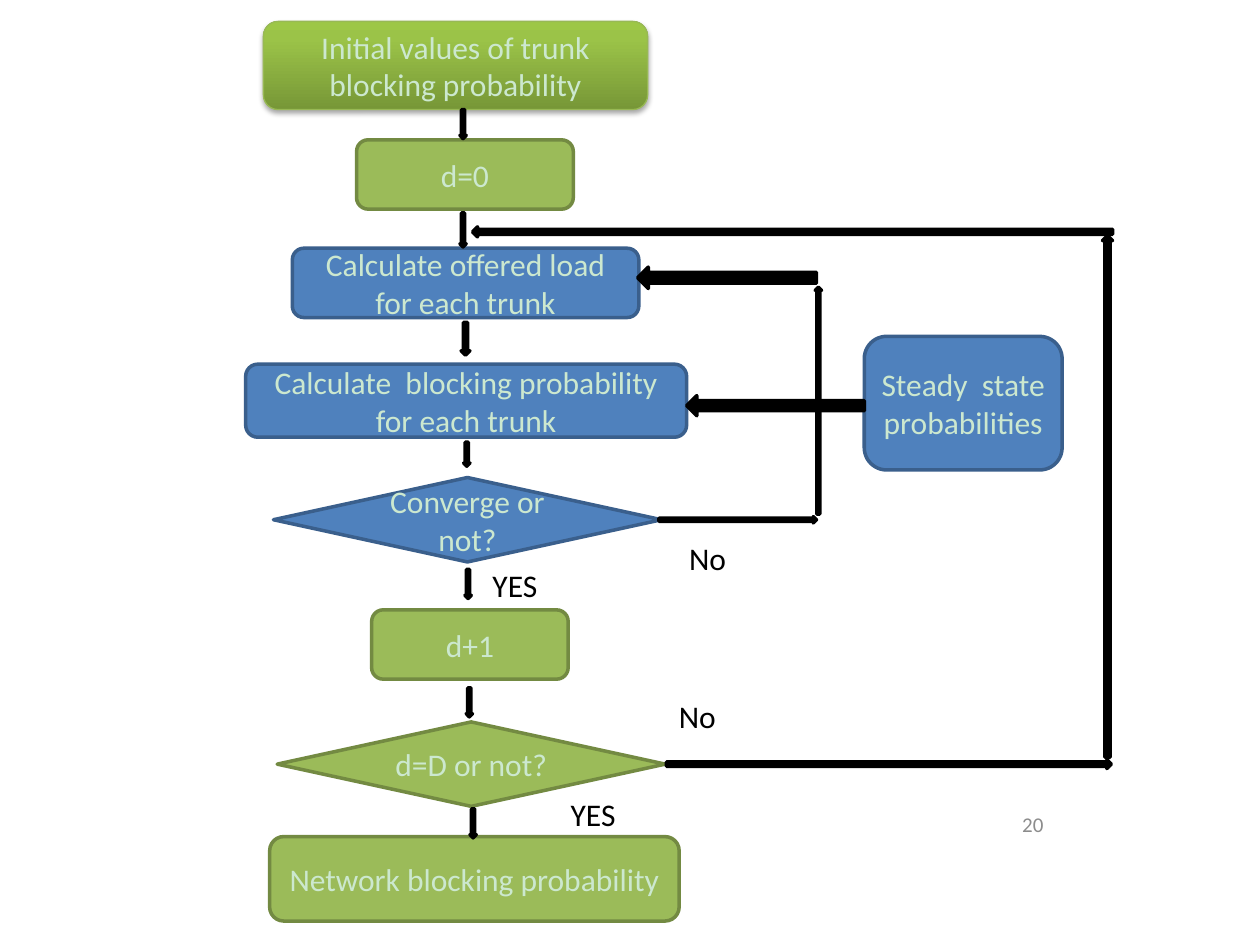
from dataclasses import dataclass

from lxml.etree import SubElement
from pptx import Presentation
from pptx.dml.color import RGBColor
from pptx.enum.shapes import MSO_SHAPE as Preset
from pptx.enum.text import MSO_ANCHOR as Anchor, MSO_AUTO_SIZE as AutoSize, PP_ALIGN as Align
from pptx.oxml.ns import qn
from pptx.util import Inches, Pt

COLUMNS, ROWS = 100, 75
FONT = "Calibri"
PALE, BLACK, GREY = "CCE8CF", "000000", "8C8C8C"
STEP, DECISION = Preset.FLOWCHART_ALTERNATE_PROCESS, Preset.FLOWCHART_DECISION


@dataclass(frozen=True)
class Cell:
    column: float
    row: float
    columns: float
    rows: float


@dataclass(frozen=True)
class Style:
    fill: str
    line: str


@dataclass(frozen=True)
class Node:
    text: str
    cell: Cell
    style: Style
    preset: Preset = STEP
    inset: bool = True


@dataclass(frozen=True)
class Label:
    text: str
    column: float
    row: float


GREEN = Style("9BBB59", "738A42")
BLUE = Style("4F81BD", "3A5F8C")
INK = Style(BLACK, BLACK)

START = Node("Initial values of trunk blocking probability", Cell(20.9, 1.7, 30.5, 7), GREEN)
NODES = [
    Node("d=0", Cell(28.3, 11.1, 17.2, 5.5), GREEN),
    Node("Calculate offered load for each trunk", Cell(23.2, 19.7, 27.5, 5.5), BLUE),
    Node("Calculate  blocking probability for each trunk", Cell(19.5, 28.9, 35, 5.8), BLUE),
    Node("Converge or not?", Cell(21.7, 37.9, 30.8, 6.7), BLUE, DECISION),
    Node("d+1", Cell(29.5, 48.4, 15.6, 5.5), GREEN),
    Node("d=D or not?", Cell(22, 57.3, 30.8, 6.7), GREEN, DECISION),
    Node("Network blocking probability ", Cell(21.4, 66.4, 32.5, 6.7), GREEN),
    Node("Steady  state probabilities", Cell(68.6, 26.7, 15.7, 10.6), BLUE, inset=False),
]
ARROWS = {
    Preset.DOWN_ARROW: [
        Cell(36.5, 8.7, 0.5, 2.3),
        Cell(36.5, 16.9, 0.5, 2.7),
        Cell(36.6, 25.6, 0.7, 2.6),
        Cell(36.8, 35.1, 0.5, 1.9),
        Cell(36.9, 45.2, 0.5, 2.3),
        Cell(37, 54.6, 0.5, 2.3),
        Cell(37.3, 64.2, 0.5, 2.3),
    ],
    Preset.RIGHT_ARROW: [Cell(52.3, 41, 12.5, 0.5), Cell(52.9, 60.3, 35.3, 0.7)],
    Preset.UP_ARROW: [Cell(64.7, 22.8, 0.5, 18), Cell(87.5, 18.7, 0.8, 41.4)],
    Preset.LEFT_ARROW: [
        Cell(50.6, 21.2, 14.2, 1.7),
        Cell(54.5, 31.4, 14.1, 1.6),
        Cell(37.5, 18, 50.8, 0.8),
    ],
}
LABELS = [
    Label("YES", 38.1, 44.4),
    Label("No", 53.7, 42.3),
    Label("No", 52.9, 54.8),
    Label("YES", 44.3, 62.6),
]

deck = Presentation()
deck.slide_width, deck.slide_height = Inches(10), Inches(7.5)
page = deck.slides.add_slide(deck.slide_layouts[6])


def color(value: str) -> RGBColor:
    return RGBColor.from_string(value)


def place(cell: Cell) -> tuple[int, int, int, int]:
    across, down = deck.slide_width / COLUMNS, deck.slide_height / ROWS
    return (round(cell.column * across), round(cell.row * down),
            round(cell.columns * across), round(cell.rows * down))


def write(box, text: str, ink: str, align: Align, size: float = 18) -> None:
    frame = box.text_frame
    frame.word_wrap = True
    frame.text = text
    para = frame.paragraphs[0]
    para.alignment = align
    font = para.runs[0].font
    font.name, font.size = FONT, Pt(size)
    font.color.rgb = color(ink)


def draw_shape(preset: Preset, cell: Cell, style: Style):
    shape = page.shapes.add_shape(preset, *place(cell))
    shape.shadow.inherit = False
    shape.fill.solid()
    shape.fill.fore_color.rgb = color(style.fill)
    shape.line.color.rgb = color(style.line)
    shape.line.width = Pt(2)
    return shape


def draw_node(node: Node):
    shape = draw_shape(node.preset, node.cell, node.style)
    write(shape, node.text, PALE, Align.CENTER)
    frame = shape.text_frame
    frame.vertical_anchor = Anchor.MIDDLE
    if not node.inset:
        frame.margin_left = frame.margin_right = frame.margin_top = frame.margin_bottom = 0
    return shape


def draw_label(label: Label) -> None:
    box = page.shapes.add_textbox(*place(Cell(label.column, label.row, 9.2, 4.2)))
    write(box, label.text, BLACK, Align.LEFT)
    box.text_frame.auto_size = AutoSize.SHAPE_TO_FIT_TEXT


def add_gradient(shape) -> None:
    shape.fill.gradient()
    shape.fill.gradient_angle = 90
    stops = shape._element.spPr.find(qn("a:gradFill")).find(qn("a:gsLst"))
    for stop in list(stops):
        stops.remove(stop)
    for percent, value in ((0, "779737"), (80, "9BC348"), (100, "9DC746")):
        stop = SubElement(stops, qn("a:gs"), pos=str(percent * 1000))
        SubElement(stop, qn("a:srgbClr"), val=value)


def add_shadow(shape) -> None:
    effects = shape._element.spPr.find(qn("a:effectLst"))
    shadow = SubElement(effects, qn("a:outerShdw"), blurRad=str(Pt(3.1)),
                        dist=str(Pt(1.8)), dir="5400000", rotWithShape="0")
    tint = SubElement(shadow, qn("a:srgbClr"), val=BLACK)
    SubElement(tint, qn("a:alpha"), val="35000")


def main() -> None:
    page.background.fill.solid()
    page.background.fill.fore_color.rgb = color("FFFFFF")

    number = page.shapes.add_textbox(*place(Cell(60.5, 63.4, 23.3, 4)))
    write(number, "20", GREY, Align.RIGHT, 12)
    number.text_frame.vertical_anchor = Anchor.MIDDLE

    for node in NODES:
        draw_node(node)
    start = draw_node(START)
    start.line.color.rgb = color("98B955")
    start.line.width = Pt(0.75)
    add_gradient(start)
    add_shadow(start)

    for preset, cells in ARROWS.items():
        for cell in cells:
            draw_shape(preset, cell, INK)
    for label in LABELS:
        draw_label(label)
    deck.save("out.pptx")


if __name__ == "__main__":
    main()
